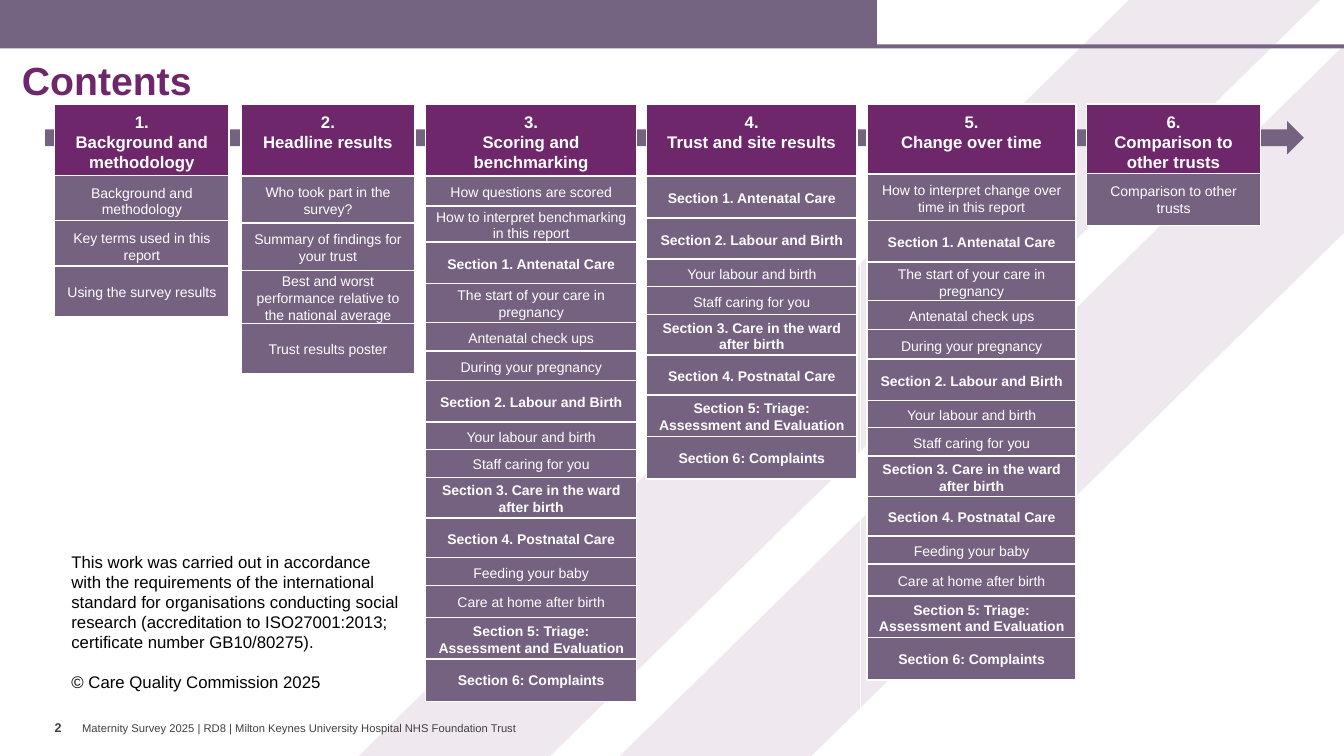
from lxml import etree
from pptx import Presentation
from pptx.dml.color import RGBColor
from pptx.enum.shapes import MSO_CONNECTOR, MSO_SHAPE
from pptx.enum.text import MSO_ANCHOR, PP_ALIGN
from pptx.oxml.ns import qn
from pptx.util import Cm, Pt

RECTANGLE, RIGHT_ARROW = MSO_SHAPE.RECTANGLE, MSO_SHAPE.RIGHT_ARROW
TOP, MIDDLE = MSO_ANCHOR.TOP, MSO_ANCHOR.MIDDLE
LEFT, CENTER = PP_ALIGN.LEFT, PP_ALIGN.CENTER

COLORS = {"plum": "6D276A", "band": "756382", "row": "746280",
          "white": "FFFFFF", "black": "000000", "grey": "404040"}
FONT = "Arial"
HEADING_TOP, HEADING_HEIGHT = 2.62, 1.8

# Rows are (text, step down to the next row in cm)
SECTION_1 = ("Section 1. Antenatal Care", 1.04)
SECTION_2 = ("Section 2. Labour and Birth", 1.04)
SECTION_3 = ("Section 3. Care in the ward after birth", 1.02)
SECTION_4 = ("Section 4. Postnatal Care", 1.0)
CLOSING_SECTIONS = [("Section 5: Triage: Assessment and Evaluation", 1.05),
                    ("Section 6: Complaints", 1.02)]
PREGNANCY = [("The start of your care in pregnancy", 0.98),
             ("Antenatal check ups", 0.73),
             ("During your pregnancy", 0.74)]
LABOUR = [("Your labour and birth", 0.69), ("Staff caring for you", 0.71)]
POSTNATAL = [("Feeding your baby", 0.7), ("Care at home after birth", 0.81)]
LABOUR_AND_WARD = [SECTION_2, *LABOUR, SECTION_3, SECTION_4]
FULL_SECTIONS = [SECTION_1, *PREGNANCY, *LABOUR_AND_WARD, *POSTNATAL,
                 *CLOSING_SECTIONS]

# heading, left, width, top of rows, overlap of rows, rows
COLUMNS = [
    ("Background and methodology", 1.38, 4.39, 4.42, 0.15,
     [("Background and methodology", 1.14),
      ("Key terms used in this report", 1.14),
      ("Using the survey results", 1.14)]),
    ("Headline results", 6.07, 4.39, 4.45, 0.05,
     [("Who took part in the survey?", 1.17),
      ("Summary of findings for your trust", 1.19),
      ("Best and worst performance relative to the national average", 1.35),
      ("Trust results poster", 1.22)]),
    ("Scoring and benchmarking", 10.73, 5.31, 4.45, 0.05,
     [("How questions are scored", 0.74),
      ("How to interpret benchmarking in this report", 0.91),
      *FULL_SECTIONS]),
    ("Trust and site results", 16.29, 5.31, 4.45, 0.05,
     [SECTION_1, *LABOUR_AND_WARD, *CLOSING_SECTIONS]),
    ("Change over time", 21.85, 5.27, 4.39, 0.05,
     [("How to interpret change over time in this report", 1.17),
      *FULL_SECTIONS]),
    ("Comparison to other trusts", 27.38, 4.39, 4.37, 0.05,
     [("Comparison to other trusts", 1.27)]),
]


def color(name):
    return RGBColor.from_string(COLORS[name])


def write(frame, lines, size, ink, bold=False, align=LEFT, anchor=TOP, gap=0):
    """Fill a text frame with one paragraph per line."""
    frame.word_wrap = True
    frame.vertical_anchor = anchor
    for index, line in enumerate(lines):
        para = frame.add_paragraph() if index else frame.paragraphs[0]
        para.text = line
        para.alignment = align
        if index and gap:
            para.space_before = Pt(gap)
        para.font.name, para.font.size = FONT, Pt(size)
        para.font.bold = bold
        para.font.color.rgb = color(ink)


def add_block(page, kind, box, fill, line=None):
    shape = page.shapes.add_shape(kind, *map(Cm, box))
    shape.shadow.inherit = False
    shape.fill.solid()
    shape.fill.fore_color.rgb = color(fill)
    if line:
        shape.line.color.rgb = color(line)
        shape.line.width = Pt(1)
    else:
        shape.line.fill.background()
    return shape


def add_text(page, box, lines, size, ink, **style):
    frame = page.shapes.add_textbox(*map(Cm, box)).text_frame
    write(frame, lines, size, ink, **style)
    return frame


def add_strip(page, points):
    """Translucent diagonal strip through the given corners."""
    corners = [(Cm(x), Cm(y)) for x, y in points]
    builder = page.shapes.build_freeform(*corners[0])
    builder.add_line_segments(corners[1:], close=True)
    strip = builder.convert_to_shape()
    strip.shadow.inherit = False
    strip.line.fill.background()
    strip.fill.solid()
    strip.fill.fore_color.rgb = color("plum")
    tint = strip.fill._xPr.find(qn("a:solidFill"))[0]
    etree.SubElement(tint, qn("a:alpha"), val="10000")


def add_background(page, width, height):
    add_strip(page, [(28.45, 0), (33.27, 0), (13.87, height), (9.04, height)])
    add_strip(page, [(width, 1.14), (width, 5.87), (20.45, height),
                     (15.62, height)])
    add_block(page, RECTANGLE, (0, 1.12, width, 0.1), "band")
    add_block(page, RECTANGLE, (0, 0, 22.1, 1.14), "band")


def set_title(page, box, text):
    title = page.shapes.title
    title.left, title.top, title.width, title.height = map(Cm, box)
    write(title.text_frame, [text], 28, "plum", bold=True, anchor=MIDDLE)
    title.text_frame.paragraphs[0].line_spacing = 0.9


def add_column(page, number, heading, left, width, top, overlap, rows):
    """Numbered heading with its stack of rows below."""
    head = add_block(page, RECTANGLE,
                     (left, HEADING_TOP, width, HEADING_HEIGHT), "plum", "white")
    head.text_frame.margin_top = Cm(0.19)
    write(head.text_frame, [f"{number}.", heading], 12, "white", bold=True,
          align=CENTER)
    for text, step in rows:
        row = add_block(page, RECTANGLE, (left, top, width, step + overlap),
                        "row", "white")
        write(row.text_frame, [text], 10, "white", align=CENTER, anchor=MIDDLE,
              bold=text.startswith("Section"))
        top += step


def add_divider(page, x, top, bottom):
    line = page.shapes.add_connector(MSO_CONNECTOR.STRAIGHT, Cm(x), Cm(top),
                                     Cm(x), Cm(bottom))
    line.line.color.rgb = color("white")
    line.line.width = Pt(0.25)
    etree.SubElement(line._element.spPr, qn("a:effectLst"))


def add_footer(page, left, top):
    number = add_text(page, (left, top, 0.64, 1.02), ["2"], 9, "grey", bold=True)
    number.margin_left = number.margin_right = 0
    label = add_text(
        page, (left + 0.69, top + 0.18, 11.5, 0.33),
        ["Maternity Survey 2025 | RD8 | Milton Keynes University Hospital "
         "NHS Foundation Trust"], 8, "grey", anchor=MIDDLE)
    label.margin_left = label.margin_right = 0
    label.margin_top = label.margin_bottom = 0


def main():
    deck = Presentation()
    width, height = 33.87, 19.05
    deck.slide_width, deck.slide_height = Cm(width), Cm(height)
    page = deck.slides.add_slide(deck.slide_layouts[5])

    add_background(page, width, height)
    set_title(page, (0.3, 1.42, 23.16, 1.35), "Contents")

    # Contents columns strung along the arrow
    add_block(page, RIGHT_ARROW, (1.14, 3.05, 31.72, 0.84), "row")
    add_divider(page, 21.68, 4.39, 17.83)
    for number, column in enumerate(COLUMNS, start=1):
        add_column(page, number, *column)

    # Accreditation and copyright
    add_text(page, (1.55, 13.77, 8.92, 4.37),
             ["This work was carried out in accordance with the requirements "
              "of the international standard for organisations conducting "
              "social research (accreditation to ISO27001:2013; certificate "
              "number GB10/80275).",
              "© Care Quality Commission 2025"], 12, "black", gap=14)
    add_footer(page, 1.38, 18.01)
    deck.save("out.pptx")


if __name__ == "__main__":
    main()
